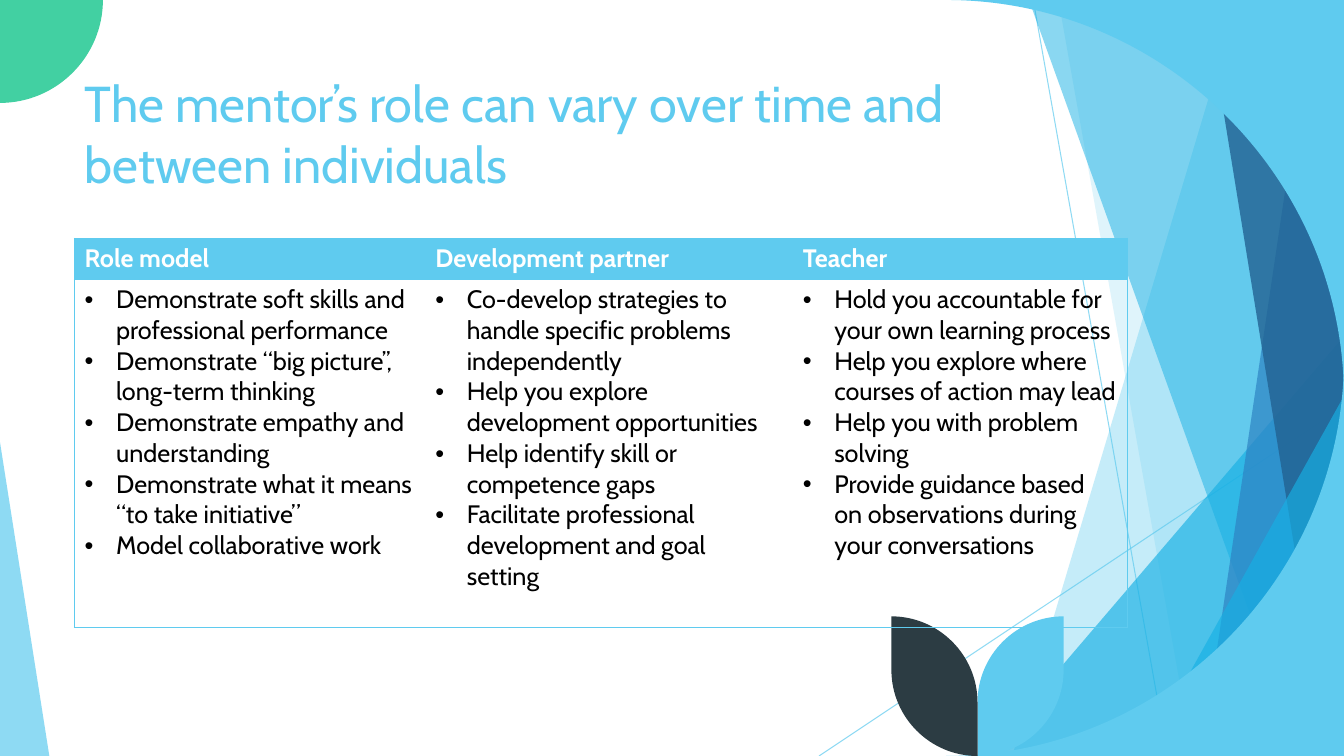
from itertools import chain

from lxml import etree
from pptx import Presentation
from pptx.dml.color import RGBColor
from pptx.enum.shapes import MSO_CONNECTOR, MSO_SHAPE
from pptx.enum.text import MSO_ANCHOR
from pptx.oxml.ns import qn
from pptx.util import Pt

PX = 9525
WIDTH, HEIGHT = 1280, 720
FONT = "Cabin"
ROUNDNESS = 0.55
STRAIGHT = MSO_CONNECTOR.STRAIGHT
TRIANGLE = MSO_SHAPE.ISOSCELES_TRIANGLE
TOP = MSO_ANCHOR.TOP

SKY = RGBColor(0x5F, 0xCB, 0xEF)
CYAN = RGBColor(0x17, 0xB0, 0xE4)
BLUE = RGBColor(0x2E, 0x83, 0xC3)
NAVY = RGBColor(0x22, 0x62, 0x92)
GREEN = RGBColor(0x42, 0xD0, 0xA2)
SLATE = RGBColor(0x2C, 0x3C, 0x43)
WHITE = RGBColor(0xFF, 0xFF, 0xFF)
BLACK = RGBColor(0x00, 0x00, 0x00)

TITLE = "The mentor’s role can vary over time and between individuals"
ROLES = [
    ("Role model", 334, [
        "Demonstrate soft skills and professional performance",
        "Demonstrate “big picture’’, long-term thinking",
        "Demonstrate empathy and understanding",
        "Demonstrate what it means “to take initiative”",
        "Model collaborative work"]),
    ("Development partner", 350, [
        "Co-develop strategies to handle specific problems independently",
        "Help you explore development opportunities",
        "Help identify skill or competence gaps",
        "Facilitate professional development and goal setting"]),
    ("Teacher", 319, [
        "Hold you accountable for your own learning process",
        "Help you explore where courses of action may lead",
        "Help you with problem solving",
        "Provide guidance based on observations during your conversations"]),
]


def px(n):
    """Turn px into EMU."""
    return round(n * PX)


def set_alpha(fill, percent):
    """Make a solid fill partly transparent."""
    color = fill._xPr.find(qn("a:solidFill"))[0]
    etree.SubElement(color, qn("a:alpha"), val=str(percent * 1000))


def paint(sp, color, alpha=100):
    """Give a shape a plain fill without line or shadow."""
    sp.shadow.inherit = False
    sp.line.fill.background()
    sp.fill.solid()
    sp.fill.fore_color.rgb = color
    if alpha < 100:
        set_alpha(sp.fill, alpha)


def add_line(s, start, end):
    """Draw a thin translucent line."""
    line = s.shapes.add_connector(STRAIGHT, *map(px, start + end))
    line.line.color.rgb = SKY
    line.line.width = Pt(0.75)
    set_alpha(line.line.fill, 70)
    etree.SubElement(line._element.spPr, qn("a:effectLst"))


def quarter(start, corner, end):
    """List the two handles and the end of a quarter circle."""
    handles = [tuple(a + ROUNDNESS * (c - a) for a, c in zip(point, corner))
               for point in (start, end)]
    return handles + [end]


def add_outline(s, start, steps, color, alpha=100):
    """Draw a closed outline; a step has one point for a line, three for a curve."""
    points = [(px(x), px(y)) for x, y in chain(*steps)]
    builder = s.shapes.build_freeform(*map(px, start), scale=1.0)
    builder.add_line_segments(points, close=True)
    sp = builder.convert_to_shape()
    segments = iter(list(sp._element.iter(qn("a:lnTo"))))
    for step in steps:
        group = [next(segments) for _ in step]
        if len(group) == 3:
            curve = etree.Element(qn("a:cubicBezTo"))
            group[0].addprevious(curve)
            for segment in group:
                curve.append(segment[0])
                segment.getparent().remove(segment)
    paint(sp, color, alpha)


def add_triangle(s, box, apex, color, alpha):
    """Draw a triangle whose apex sits at a share of its width."""
    sp = s.shapes.add_shape(TRIANGLE, *map(px, box))
    sp.adjustments[0] = apex
    paint(sp, color, alpha)


def add_text(p, text, size=18, color=BLACK, bold=False):
    """Add a formatted run to a paragraph."""
    r = p.add_run()
    r.text = text
    r.font.name = FONT
    r.font.size = Pt(size)
    r.font.bold = bold
    r.font.color.rgb = color


def draw_facets(s, right, bottom):
    """Draw the translucent facets on both slide edges."""
    def add_band(top, foot, color, alpha):
        steps = [[(right, 0)], [(right, bottom)], [(foot, bottom)]]
        add_outline(s, (top, 0), steps, color, alpha)

    add_line(s, (984, 0), (1112, bottom))
    add_line(s, (right, 387), (780, bottom))
    add_band(1179, 964, SKY, 36)
    add_band(1008, 1136, SKY, 20)
    add_triangle(s, (938, 320, right - 938, bottom - 320), 1, CYAN, 66)
    add_band(980, 1239, CYAN, 50)
    add_band(1251, 1144, BLUE, 70)
    add_band(1148, 1265, NAVY, 80)
    add_triangle(s, (1089, 377, right - 1089, bottom - 377), 1, CYAN, 66)
    add_triangle(s, (0, 421, 47, bottom - 421), 0, SKY, 70)


def draw_corners(s, right, bottom):
    """Draw the rounded masks on the right and the green quarter circle."""
    radius, small = 379, 98
    left = right - radius
    for edge, inner in ((0, radius), (bottom, bottom - radius)):
        corner = (right, edge)
        arc = quarter((left, edge), corner, (right, inner))
        add_outline(s, (left, edge), [arc, [corner]], SKY)
    arc = quarter((small, 0), (small, small), (0, small))
    add_outline(s, (0, 0), [[(small, 0)], arc], GREEN)


def draw_leaves(s, stem, top, width, height):
    """Draw two mirrored leaves on either side of a stem."""
    bottom = top + height
    for tip, color in ((stem + width, SKY), (stem - width, SLATE)):
        shoulder, foot = (tip, bottom - width), (stem, bottom)
        neck, peak = (stem, top + width), (tip, top)
        steps = [[shoulder], quarter(shoulder, (tip, bottom), foot),
                 [neck], quarter(neck, (stem, top), peak)]
        add_outline(s, peak, steps, color)


def draw_title(s, x, y, w, h):
    """Place the slide title."""
    tf = s.shapes.add_textbox(*map(px, (x, y, w, h))).text_frame
    tf.word_wrap = True
    tf.vertical_anchor = TOP
    add_text(tf.paragraphs[0], TITLE, size=36, color=SKY)


def set_borders(cell, sides):
    """Draw the given cell sides and hide the others."""
    tc_pr = cell._tc.get_or_add_tcPr()
    for i, side in enumerate("LRTB"):
        ln = etree.Element(qn("a:ln" + side), w=str(Pt(1)))
        if side in sides:
            fill = etree.SubElement(ln, qn("a:solidFill"))
            etree.SubElement(fill, qn("a:srgbClr"), val=str(SKY))
        else:
            etree.SubElement(ln, qn("a:noFill"))
        tc_pr.insert(i, ln)


def add_bullet(p):
    """Give a paragraph a hanging bullet."""
    p_pr = p._p.get_or_add_pPr()
    p_pr.set("marL", str(px(30)))
    p_pr.set("indent", str(px(-30)))
    etree.SubElement(p_pr, qn("a:buFont"), typeface="Arial")
    etree.SubElement(p_pr, qn("a:buChar"), char="•")


def draw_roles(s, x, y, head_h, body_h):
    """Draw the table of mentor roles."""
    w = sum(width for _, width, _ in ROLES)
    box = map(px, (x, y, w, head_h + body_h))
    table = s.shapes.add_table(2, len(ROLES), *box).table
    table.horz_banding = False
    table.rows[0].height, table.rows[1].height = px(head_h), px(body_h)
    for i, (role, width, tasks) in enumerate(ROLES):
        table.columns[i].width = px(width)
        edge = {0: "L", len(ROLES) - 1: "R"}.get(i, "")
        head, body = table.cell(0, i), table.cell(1, i)
        head.fill.solid()
        head.fill.fore_color.rgb = SKY
        body.fill.background()
        set_borders(head, edge + "TB")
        set_borders(body, edge + "TB")
        add_text(head.text_frame.paragraphs[0], role, color=WHITE, bold=True)
        tf = body.text_frame
        for j, task in enumerate(tasks):
            p = tf.add_paragraph() if j else tf.paragraphs[0]
            add_bullet(p)
            add_text(p, task)


def main():
    """Build and save the slide."""
    prs = Presentation()
    prs.slide_width, prs.slide_height = px(WIDTH), px(HEIGHT)
    s = prs.slides.add_slide(prs.slide_layouts[6])
    draw_facets(s, WIDTH, HEIGHT)
    draw_corners(s, WIDTH, HEIGHT)
    draw_leaves(s, 931, 587, 82, 133)
    draw_title(s, 71, 64, 902, 138)
    draw_roles(s, 71, 227, 39, 332)
    prs.save("out.pptx")


if __name__ == "__main__":
    main()
